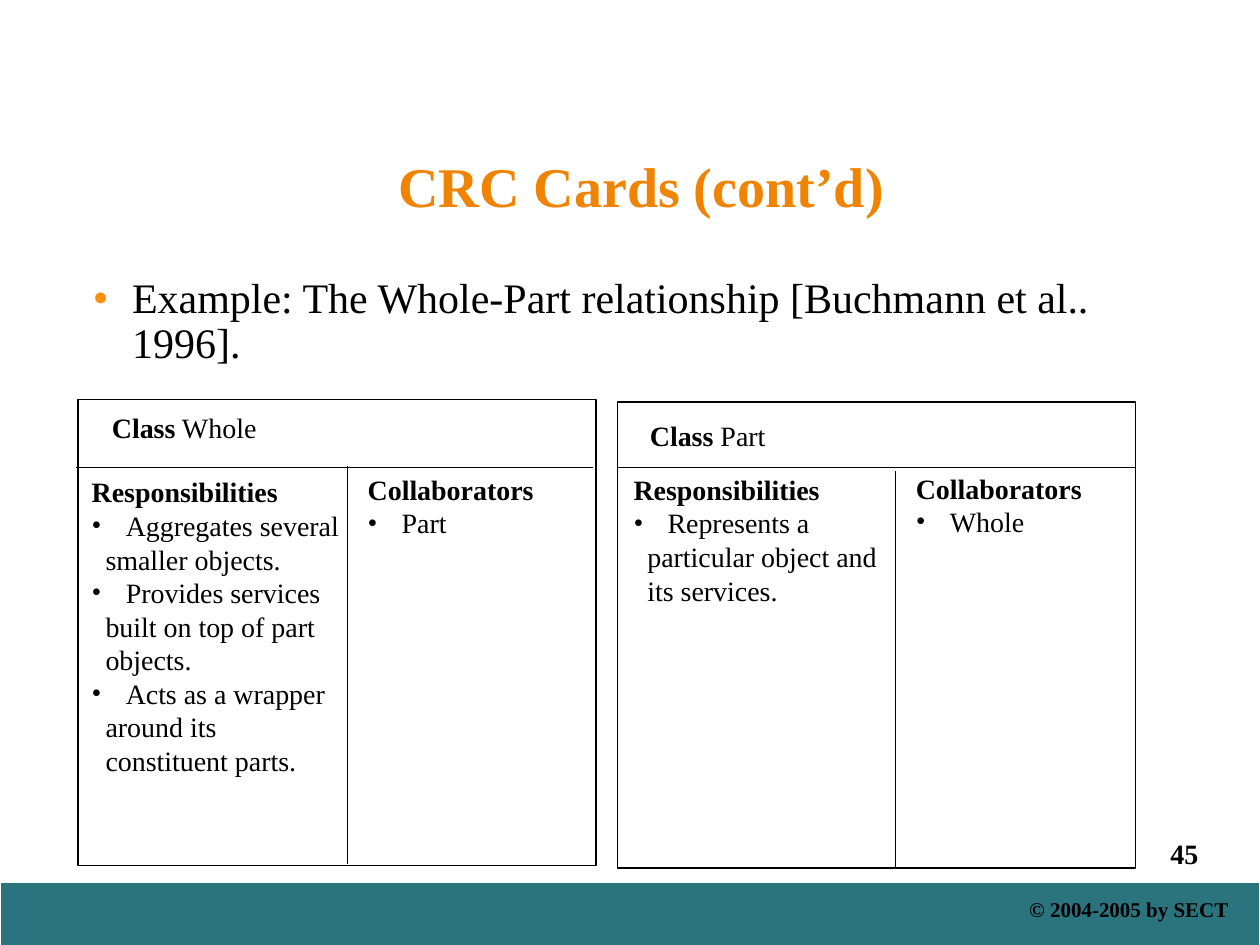
import math

from lxml import etree
from pptx import Presentation
from pptx.dml.color import RGBColor
from pptx.enum import shapes, text
from pptx.oxml.ns import qn
from pptx.util import Inches, Pt

BLACK, WHITE, TEAL, ORANGE, AMBER = "000000", "FFFFFF", "2B737D", "F08402", "FC8F0C"
BULLET_INDENT, CONTINUATION_INDENT = 0.27, 0.11


def color(value):
    """Turn a hex string into a colour."""
    return RGBColor.from_string(value)


def style_shape(shape, fill, line):
    """Give a shape a flat fill and a thin outline."""
    shape.shadow.inherit = False
    shape.fill.solid()
    shape.fill.fore_color.rgb = color(fill)
    shape.line.color.rgb = color(line)
    shape.line.width = Pt(0.75)


def add_line(slide, start, end, width=0.75):
    """Draw a straight black line between two points."""
    points = [Inches(value) for value in (*start, *end)]
    line = slide.shapes.add_connector(shapes.MSO_CONNECTOR.STRAIGHT, *points)
    line.line.color.rgb = color(BLACK)
    line.line.width = Pt(width)
    etree.SubElement(line._element.spPr, qn("a:effectLst"))


def add_text_box(slide, left, top, width, height):
    """Add an empty wrapping text box and return its text frame."""
    box = slide.shapes.add_textbox(*map(Inches, (left, top, width, height)))
    box.text_frame.word_wrap = True
    return box.text_frame


def set_font(paragraph, size, bold=False, fill=BLACK):
    """Set the font of a whole paragraph."""
    font = paragraph.font
    font.name, font.size, font.bold = "Times New Roman", Pt(size), bold
    font.color.rgb = color(fill)


def set_indent(paragraph, margin, hanging=0):
    """Set the left margin and hanging indent of a paragraph."""
    properties = paragraph._p.get_or_add_pPr()
    properties.set("marL", str(Inches(margin)))
    properties.set("indent", str(-Inches(hanging)))
    return properties


def set_bullet(paragraph, margin, character="•", fill=BLACK, percent=100):
    """Give a paragraph a hanging bullet."""
    properties = set_indent(paragraph, margin, margin)
    holder = etree.Element(qn("a:buClr"))
    etree.SubElement(holder, qn("a:srgbClr"), val=fill)
    size = etree.Element(qn("a:buSzPct"), val=str(percent * 1000))
    font = etree.Element(qn("a:buFont"), typeface="Times New Roman")
    mark = etree.Element(qn("a:buChar"), char=character)
    position = len(properties.findall(qn("a:lnSpc")))
    for offset, element in enumerate((holder, size, font, mark)):
        properties.insert(position + offset, element)


def add_label(slide, area, wording, size, fill=BLACK):
    """Add a single bold line of text and return its paragraph."""
    frame = add_text_box(slide, *area)
    paragraph = frame.paragraphs[0]
    paragraph.text = wording
    set_font(paragraph, size, True, fill)
    return paragraph


def corner(center_x, center_y, radius_x, radius_y, start):
    """Return the points of a clockwise quarter ellipse."""
    angles = [math.radians(start + step * 7.5) for step in range(13)]
    return [(center_x + radius_x * math.cos(angle), center_y + radius_y * math.sin(angle))
            for angle in angles]


def add_frame(slide):
    """Draw the teal border with two rounded inner corners."""
    builder = slide.shapes.build_freeform(0, 0, scale=Inches(1))
    builder.add_line_segments([(10, 0), (10, 7.5), (0, 7.5)])
    builder.move_to(0.16, 0.14)
    inner = corner(9.2, 0.8, 0.68, 0.66, -90) + [(9.88, 7.38)]
    inner += corner(0.79, 6.66, 0.63, 0.72, 90)
    builder.add_line_segments(inner)
    style_shape(builder.convert_to_shape(), TEAL, WHITE)


def add_heading(slide):
    """Add the slide title and the introductory bullet."""
    title = add_label(slide, (0.68, 1.26, 8.82, 0.53), "CRC Cards (cont’d)", 32, ORANGE)
    title.alignment = text.PP_ALIGN.CENTER
    title.line_spacing = 0.8
    frame = add_text_box(slide, 0.64, 2.15, 8.86, 0.82)
    paragraph = frame.paragraphs[0]
    paragraph.text = "Example: The Whole-Part relationship [Buchmann et al.. 1996]."
    paragraph.line_spacing = 0.9
    set_font(paragraph, 24)
    set_bullet(paragraph, 0.31, "●", AMBER, 60)


def add_section(slide, area, heading, items):
    """Add a bold heading and bulleted items, each a list of lines."""
    frame = add_label(slide, area, heading, 16)._parent
    for item in items:
        for number, wording in enumerate(item):
            paragraph = frame.add_paragraph()
            paragraph.text = wording
            set_font(paragraph, 16)
            if number:
                set_indent(paragraph, CONTINUATION_INDENT)
            else:
                set_bullet(paragraph, BULLET_INDENT)


def add_card_outline(slide, left, top, rule_left, divider, divider_top):
    """Draw the box and rules of a card."""
    card = slide.shapes.add_shape(shapes.MSO_SHAPE.RECTANGLE,
                                  *map(Inches, (left, top, 4.11, 3.7)))
    style_shape(card, WHITE, BLACK)
    add_line(slide, (rule_left, 3.71), (rule_left + 4.11, 3.71))
    add_line(slide, (divider, divider_top), (divider, divider_top + 3.16))


def add_card_text(slide, name, name_at, duties_at, duties, partner_at, partner):
    """Write the class name, responsibilities and collaborator of a card."""
    frame = add_text_box(slide, *name_at, 1.6, 0.37)
    paragraph = frame.paragraphs[0]
    set_font(paragraph, 16)
    label = paragraph.add_run()
    label.text = "Class"
    label.font.bold = True
    paragraph.add_run().text = f" {name}"
    height = 0.37 + 0.27 * sum(map(len, duties))
    add_section(slide, (*duties_at, 2.2, height), "Responsibilities", duties)
    add_section(slide, (*partner_at, 1.7, 0.64), "Collaborators", [[partner]])


def main():
    """Build and save the slide."""
    presentation = Presentation()
    presentation.slide_width, presentation.slide_height = Inches(10), Inches(7.5)
    slide = presentation.slides.add_slide(presentation.slide_layouts[6])
    add_line(slide, (0, 7.04), (10, 7.04), 2.25)
    add_frame(slide)
    add_label(slide, (9.19, 6.59, 0.61, 0.37), "45", 16)
    add_label(slide, (8.07, 7.07, 1.88, 0.3), "© 2004-2005 by SECT", 12)
    add_heading(slide)
    add_card_outline(slide, 0.62, 3.17, 0.6, 2.76, 3.7)
    add_card_outline(slide, 4.9, 3.19, 4.9, 7.11, 3.74)
    whole_duties = [["Aggregates several", "smaller objects."],
                    ["Provides services", "built on top of part", "objects."],
                    ["Acts as a wrapper", "around its", "constituent parts."]]
    part_duties = [["Represents a", "particular object and", "its services."]]
    add_card_text(slide, "Whole", (0.79, 3.21), (0.63, 3.72), whole_duties, (2.82, 3.7), "Part")
    add_card_text(slide, "Part", (5.06, 3.27), (4.93, 3.7), part_duties, (7.17, 3.69), "Whole")
    presentation.save("out.pptx")


if __name__ == "__main__":
    main()
